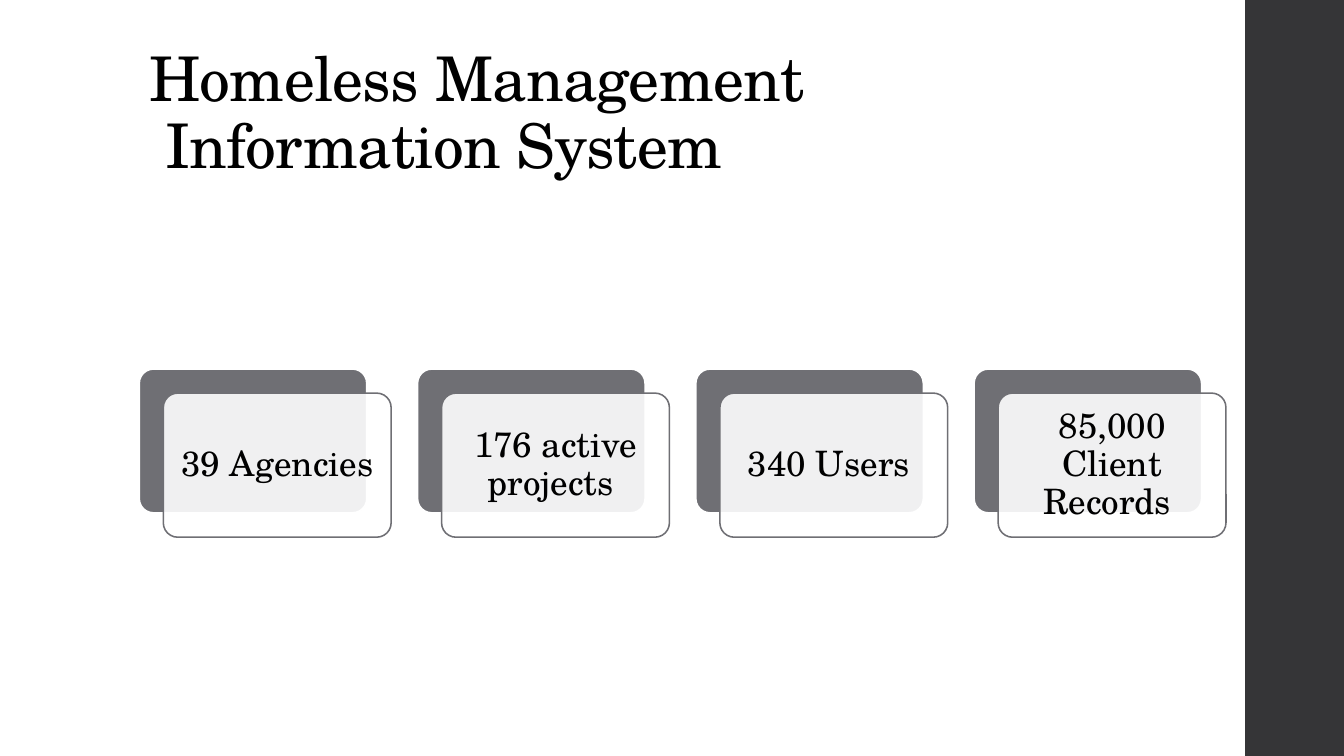
from lxml.etree import SubElement
from pptx import Presentation
from pptx.dml.color import RGBColor
from pptx.enum.shapes import MSO_SHAPE as Preset
from pptx.enum.text import MSO_ANCHOR as Anchor, MSO_AUTO_SIZE as AutoSize, PP_ALIGN as Align
from pptx.oxml.ns import qn
from pptx.util import Emu, Pt

COLORS = {"ink": "000000", "paper": "FFFFFF", "gray": "6F6F74", "bar": "353537"}
FONT = "TeX Gyre Schola"
WIDTH, HEIGHT = 1333, 750


def px(length):
    return Emu(length * 9144)


def rgb(name):
    return RGBColor.from_string(COLORS[name])


class SlideBuilder:
    def __init__(self, slide):
        self.slide = slide

    def style_text(self, frame, size, anchor, align):
        frame.word_wrap = True
        frame.auto_size = AutoSize.NONE
        frame.vertical_anchor = anchor
        for paragraph in frame.paragraphs:
            paragraph.alignment = align
            paragraph.line_spacing = 0.9
            for run in paragraph.runs:
                run.font.size = Pt(size)
                run.font.name = FONT
                run.font.color.rgb = rgb("ink")

    def title(self, text, left, top, width, height):
        heading = self.slide.shapes.title
        heading.left, heading.top = px(left), px(top)
        heading.width, heading.height = px(width), px(height)
        heading.text_frame.text = text
        self.style_text(heading.text_frame, 44, Anchor.BOTTOM, Align.LEFT)
        for run in heading.text_frame.paragraphs[0].runs:
            run.font._element.set("spc", "-50")

    def box(self, preset, left, top, width, height, fill, line=None, weight=1):
        box = self.slide.shapes.add_shape(preset, px(left), px(top), px(width), px(height))
        box.shadow.inherit = False
        box.fill.solid()
        box.fill.fore_color.rgb = rgb(fill)
        if line:
            box.line.color.rgb = rgb(line)
            box.line.width = Pt(weight)
        else:
            box.line.fill.background()
        return box

    def rounded(self, *args):
        box = self.box(Preset.ROUNDED_RECTANGLE, *args)
        box.adjustments[0] = 0.1
        return box

    def card(self, text, left, top, width, height, shift):
        # Solid back plate
        self.rounded(left, top, width, height, "gray", "paper", 1.35)
        # Translucent front plate with the figure
        front = self.rounded(left + shift, top + shift, width, height, "paper", "gray", 1.1)
        tint = front.fill._xPr.find(qn("a:solidFill"))[0]
        SubElement(tint, qn("a:alpha"), val="90000")
        frame = front.text_frame
        frame.margin_left = frame.margin_right = px(10)
        frame.margin_top = frame.margin_bottom = px(10)
        frame.text = text
        self.style_text(frame, 25, Anchor.MIDDLE, Align.CENTER)


def main():
    deck = Presentation()
    deck.slide_width, deck.slide_height = px(WIDTH), px(HEIGHT)
    builder = SlideBuilder(deck.slides.add_slide(deck.slide_layouts[5]))

    # Side bar and heading
    builder.box(Preset.RECTANGLE, 1235, 0, 100, HEIGHT, "bar")
    builder.title("Homeless Management\v Information System", 138, 40, 1078, 145)

    # Row of key figures
    figures = ["39 Agencies", "176 active projects ", "340 Users ", "85,000 Client Records "]
    for index, figure in enumerate(figures):
        builder.card(figure, 138 + index * 276, 366, 226, 143, 24)

    deck.save("out.pptx")


if __name__ == "__main__":
    main()
